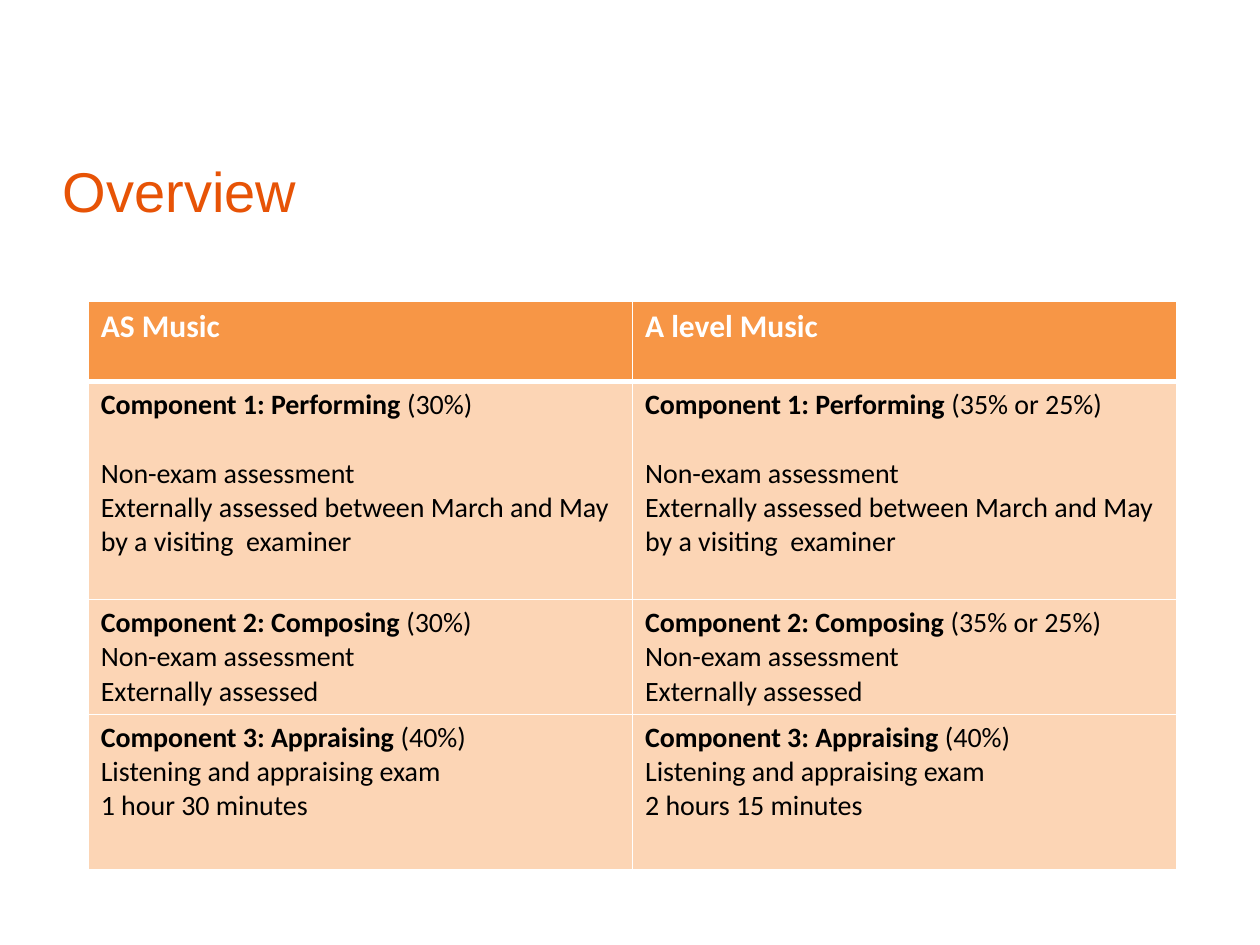
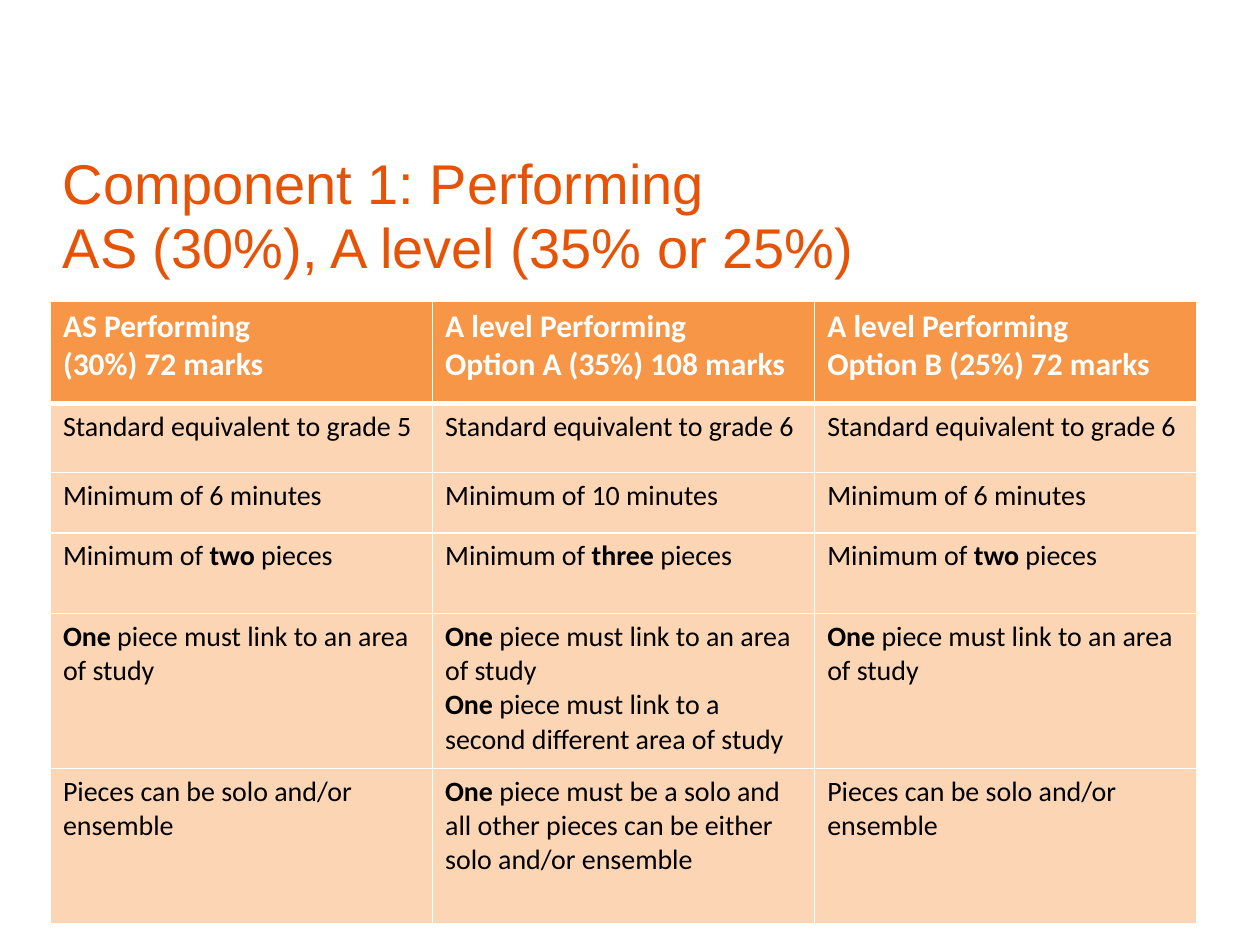
"""Build two slides that compare the AS and A level music courses in tables."""
from dataclasses import dataclass

from lxml.etree import SubElement
from pptx import Presentation
from pptx.dml.color import RGBColor as RGB
from pptx.oxml.ns import qn
from pptx.util import Emu, Inches, Pt

COLORS = {"title": "E75306", "head": "F79646", "body": "FCD5B5", "rule": "FFFFFF", "text": "000000"}
TITLE = {"name": "Arial", "size": Pt(32), "color": "title"}
HEAD = {"name": "Calibri", "size": Pt(18), "color": "rule", "bold": True}
BODY = {"name": "Calibri", "size": Pt(16), "color": "text", "bold": False}

WIDTH, HEIGHT = Inches(10), Inches(7.5)
TITLE_BOX = (4, 15.2, 92.1, 15.2)
TABLE_TOP = 31.87
BLANK_LINE = Pt(19.5)


@dataclass(frozen=True)
class Comparison:
    """A titled table; lengths are percentages of the slide, *stars* mark bold, ¶ a blank line."""

    title: list[str]
    left: float
    width: float
    row_heights: list[float]
    rows: list[list[str]]
    line_spacing: float = 1.0


EXTERNAL = "\nNon-exam assessment\nExternally assessed"
VISIT = "\n¶Non-exam assessment\nExternally assessed between March and May by a visiting  examiner"
EXAM = "\nListening and appraising exam\n"
LINK = "*One* piece must link to an area of study"
ENSEMBLE = "Pieces can be solo and/or ensemble"

SLIDES = [
    Comparison(
        title=["Overview"],
        left=7,
        width=86.4,
        row_heights=[8.53, 23.07, 12.13, 16.4],
        rows=[
            ["AS Music", "A level Music"],
            ["*Component 1: Performing* (30%)" + VISIT, "*Component 1: Performing* (35% or 25%)" + VISIT],
            ["*Component 2: Composing* (30%)" + EXTERNAL, "*Component 2: Composing* (35% or 25%)" + EXTERNAL],
            ["*Component 3: Appraising* (40%)" + EXAM + "1 hour 30 minutes",
             "*Component 3: Appraising* (40%)" + EXAM + "2 hours 15 minutes"],
        ],
    ),
    Comparison(
        title=["Component 1: Performing", "AS (30%), A level (35% or 25%)"],
        left=4,
        width=91,
        row_heights=[10.8, 7.33, 6.4, 8.53, 16.4, 16.4],
        rows=[
            ["AS Performing\n(30%) 72 marks", "A level Performing\nOption A (35%) 108 marks",
             "A level Performing\nOption B (25%) 72 marks"],
            [f"Standard equivalent to grade {grade}" for grade in (5, 6, 6)],
            [f"Minimum of {minutes} minutes" for minutes in (6, 10, 6)],
            [f"Minimum of *{count}* pieces" for count in ("two", "three", "two")],
            [LINK, LINK + "\n*One* piece must link to a second different area of study", LINK],
            [ENSEMBLE, "*One* piece must be a solo and all other pieces can be either solo and/or ensemble",
             ENSEMBLE],
        ],
        line_spacing=0.9,
    ),
]


def across(percent: float) -> Emu:
    """Return a share of the slide's width."""
    return Emu(round(WIDTH * percent / 100))


def down(percent: float) -> Emu:
    """Return a share of the slide's height."""
    return Emu(round(HEIGHT * percent / 100))


def add_run(p, text: str, style: dict) -> None:
    """Append a run formatted from a dict of font values."""
    r = p.add_run()
    r.text = text
    for key, value in style.items():
        if key == "color":
            r.font.color.rgb = RGB.from_string(COLORS[value])
        else:
            setattr(r.font, key, value)


def write_lines(tf, lines: list[str], style: dict) -> list:
    """Write one paragraph per line and return the paragraphs."""
    paragraphs = []
    for i, line in enumerate(lines):
        p = tf.add_paragraph() if i else tf.paragraphs[0]
        if line.startswith("¶"):
            p.space_before = BLANK_LINE
        for j, part in enumerate(line.lstrip("¶").split("*")):
            if part:
                add_run(p, part, style | {"bold": True} if j % 2 else style)
        paragraphs.append(p)
    return paragraphs


def add_title(s, item: Comparison) -> None:
    """Add the slide title as a text box."""
    x, y, w, h = TITLE_BOX
    tf = s.shapes.add_textbox(across(x), down(y), across(w), down(h)).text_frame
    for key, value in {"word_wrap": True, "margin_top": Inches(0.1)}.items():
        setattr(tf, key, value)
    for i, p in enumerate(write_lines(tf, item.title, TITLE)):
        p.line_spacing = item.line_spacing
        if i:
            p.space_before = Pt(2)


def set_borders(cell, widths: dict[str, float]) -> None:
    """Draw solid cell borders with widths in points for each side."""
    tc_pr = cell._tc.get_or_add_tcPr()
    for side, width in widths.items():
        ln = SubElement(tc_pr, qn(f"a:ln{side}"), w=str(Pt(width)))
        SubElement(SubElement(ln, qn("a:solidFill")), qn("a:srgbClr"), val=COLORS["rule"])


def add_comparison(s, item: Comparison) -> None:
    """Add the table with equal columns, a header row and ruled cells."""
    n_cols = len(item.rows[0])
    table = s.shapes.add_table(len(item.rows), n_cols, across(item.left), down(TABLE_TOP),
                               across(item.width), down(sum(item.row_heights))).table
    for key in ("first_row", "horz_banding"):
        setattr(table, key, False)
    for col in table.columns:
        col.width = across(item.width / n_cols)
    for i, (height, texts) in enumerate(zip(item.row_heights, item.rows)):
        table.rows[i].height = down(height)
        for j, text in enumerate(texts):
            cell = table.cell(i, j)
            set_borders(cell, {"L": 1, "R": 1, "T": 3 if i == 1 else 1, "B": 3 if i == 0 else 1})
            cell.fill.solid()
            cell.fill.fore_color.rgb = RGB.from_string(COLORS["body" if i else "head"])
            write_lines(cell.text_frame, text.split("\n"), BODY if i else HEAD)


def main() -> None:
    """Build and save the presentation."""
    prs = Presentation()
    prs.slide_width, prs.slide_height = WIDTH, HEIGHT
    for item in SLIDES:
        s = prs.slides.add_slide(prs.slide_layouts[6])
        add_title(s, item)
        add_comparison(s, item)
    prs.save("out.pptx")


if __name__ == "__main__":
    main()
